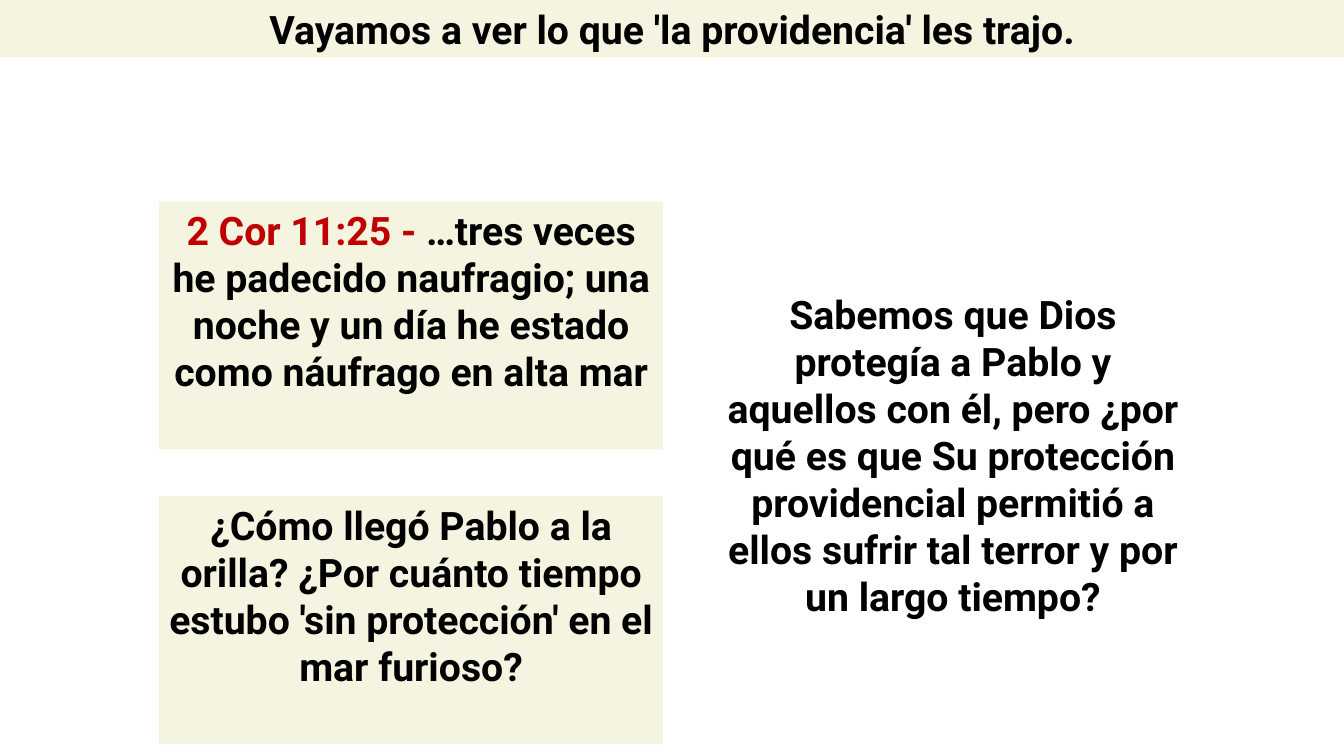
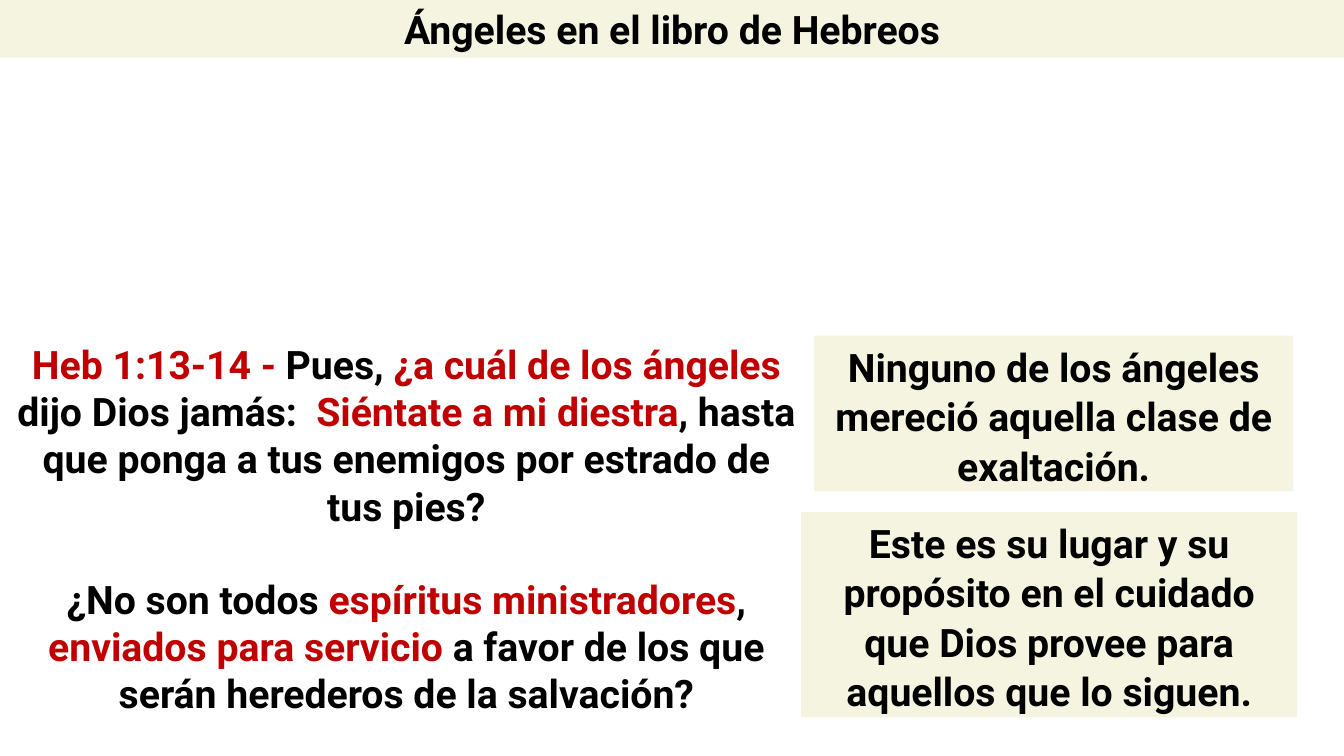
from pptx import Presentation
from pptx.dml.color import RGBColor
from pptx.enum.shapes import MSO_SHAPE
from pptx.enum.text import MSO_ANCHOR, MSO_AUTO_SIZE, PP_ALIGN
from pptx.util import Cm, Pt

FONT, SIZE = "Roboto", Pt(28)
BLACK, RED, CREAM = "000000", "C00000", "F4F4E0"
SLIDE_WIDTH, SLIDE_HEIGHT, BAND_HEIGHT = 33.87, 19.05, 1.45
VERSE_GAP = Pt(33)

# Each box: (left, top, width, height) in cm, filled or not, line spacing,
# and paragraphs made of (text, colour) pieces.
SLIDES = [
    {
        "title": "Vayamos a ver lo que 'la providencia' les trajo.",
        "boxes": [
            ((4.01, 5.08, 12.7, 6.25), True, 1.0, [[
                ("2 Cor 11:25 - ", RED),
                ("…tres veces he padecido naufragio; una noche y un día "
                 "he estado como náufrago en alta mar", BLACK),
            ]]),
            ((4.01, 12.5, 12.7, 6.25), True, 1.0, [[
                ("¿Cómo llegó Pablo a la orilla? ¿Por cuánto tiempo estubo "
                 "'sin protección' en el mar furioso?", BLACK),
            ]]),
            ((17.98, 7.19, 12.07, 9.83), False, 1.0, [[
                ("Sabemos que Dios protegía a Pablo y aquellos con él, pero "
                 "¿por qué es que Su protección providencial permitió a ellos "
                 "sufrir tal terror y por un largo tiempo?", BLACK),
            ]]),
        ],
    },
    {
        "title": "Ángeles en el libro de Hebreos",
        "boxes": [
            ((20.52, 8.46, 12.07, 3.91), True, 1.05, [[
                ("Ninguno de los ángeles mereció aquella clase de "
                 "exaltación.", BLACK),
            ]]),
            ((0.08, 8.46, 20.32, 9.83), False, 1.0, [
                [
                    ("Heb 1:13-14 - ", RED),
                    ("Pues, ", BLACK),
                    ("¿a cuál de los ángeles ", RED),
                    ("dijo Dios jamás:  ", BLACK),
                    ("Siéntate a mi diestra", RED),
                    (", hasta que ponga a tus enemigos por estrado de "
                     "tus pies?", BLACK),
                ],
                [
                    ("¿No son todos ", BLACK),
                    ("espíritus ministradores", RED),
                    (", ", BLACK),
                    ("enviados para servicio ", RED),
                    ("a favor de los que serán herederos de la "
                     "salvación?", BLACK),
                ],
            ]),
            ((20.19, 12.9, 12.5, 5.18), True, 1.05, [[
                ("Este es su lugar y su propósito en el cuidado que Dios "
                 "provee para aquellos que lo siguen.", BLACK),
            ]]),
        ],
    },
]


def colour(hex_code):
    return RGBColor.from_string(hex_code)


def fill_cream(shape):
    shape.fill.solid()
    shape.fill.fore_color.rgb = colour(CREAM)
    shape.line.fill.background()


def write(shape, paragraphs, line_spacing=1.0):
    frame = shape.text_frame
    frame.word_wrap = True
    frame.auto_size = MSO_AUTO_SIZE.NONE
    frame.vertical_anchor = MSO_ANCHOR.TOP
    for index, pieces in enumerate(paragraphs):
        paragraph = frame.add_paragraph() if index else frame.paragraphs[0]
        paragraph.alignment = PP_ALIGN.CENTER
        paragraph.line_spacing = line_spacing
        paragraph.space_before = VERSE_GAP if index else Pt(0)
        for text, hex_code in pieces:
            run = paragraph.add_run()
            run.text = text
            run.font.name, run.font.size, run.font.bold = FONT, SIZE, True
            run.font.color.rgb = colour(hex_code)


def style_title_band(layout):
    """Make the layout's title a full-width cream band that slides inherit."""
    band = layout.placeholders[0]
    band.left, band.top = Cm(0), Cm(0)
    band.width, band.height = Cm(SLIDE_WIDTH), Cm(BAND_HEIGHT)
    fill_cream(band)


def add_box(slide, place, filled, line_spacing, paragraphs):
    place = [Cm(length) for length in place]
    if filled:
        shape = slide.shapes.add_shape(MSO_SHAPE.RECTANGLE, *place)
        shape.shadow.inherit = False
        fill_cream(shape)
    else:
        shape = slide.shapes.add_textbox(*place)
    write(shape, paragraphs, line_spacing)


def main():
    presentation = Presentation()
    presentation.slide_width = Cm(SLIDE_WIDTH)
    presentation.slide_height = Cm(SLIDE_HEIGHT)
    layout = presentation.slide_layouts.get_by_name("Title Only")
    style_title_band(layout)
    for content in SLIDES:
        slide = presentation.slides.add_slide(layout)
        write(slide.shapes.title, [[(content["title"], BLACK)]])
        for box in content["boxes"]:
            add_box(slide, *box)
    presentation.save("out.pptx")


if __name__ == "__main__":
    main()
